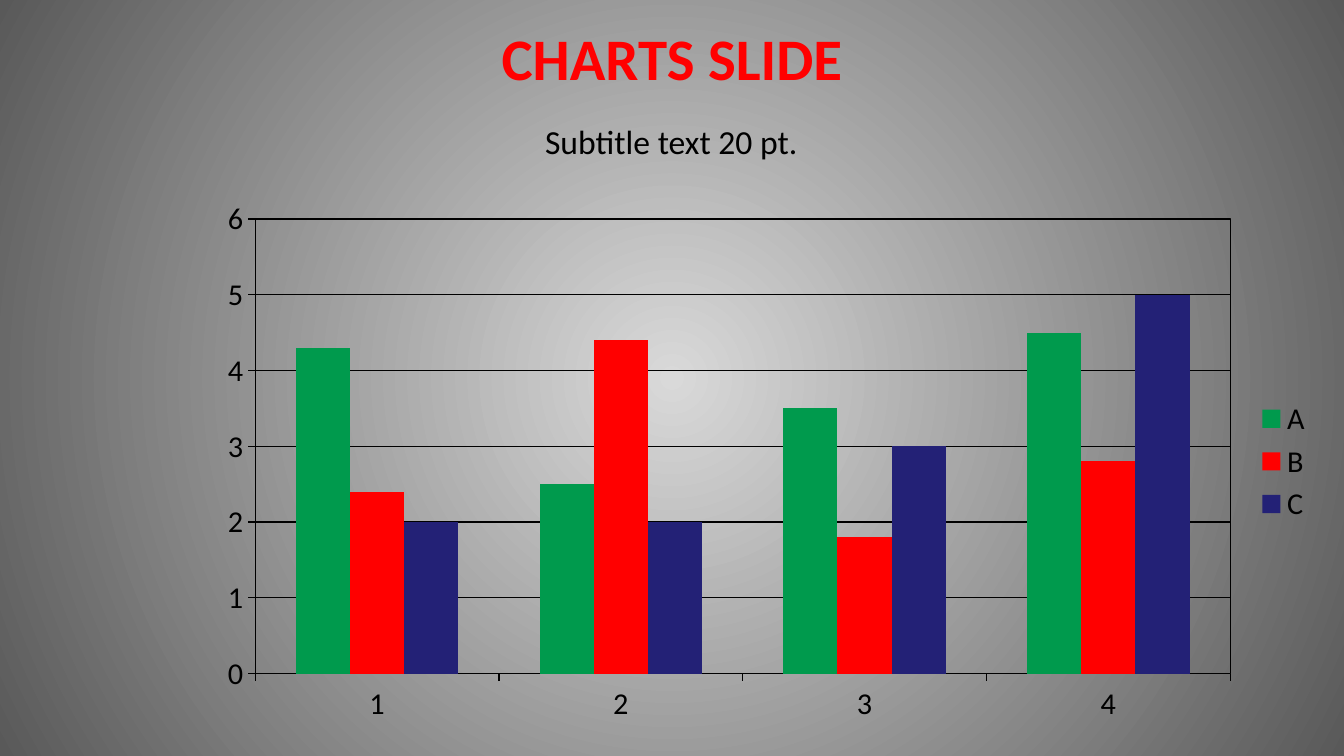
from lxml import etree
from pptx import Presentation
from pptx.chart import data
from pptx.dml.color import RGBColor
from pptx.enum import chart as kinds, text
from pptx.oxml import ns
from pptx.util import Inches, Pt

FONT = "Calibri"
BLACK = RGBColor(0x00, 0x00, 0x00)
RED = RGBColor(0xFF, 0x00, 0x00)
GREEN = RGBColor(0x00, 0x9A, 0x4D)
NAVY = RGBColor(0x23, 0x21, 0x76)
LIGHT_GRAY = RGBColor(0xD9, 0xD9, 0xD9)
DARK_GRAY = RGBColor(0x59, 0x59, 0x59)

CATEGORIES = ("1", "2", "3", "4")
SERIES = (
    ("A", (4.3, 2.5, 3.5, 4.5), GREEN),
    ("B", (2.4, 4.4, 1.8, 2.8), RED),
    ("C", (2, 2, 3, 5), NAVY),
)


def paint_background(page):
    fill = page.background.fill
    fill.gradient()
    for stop, color in zip(fill.gradient_stops, (LIGHT_GRAY, DARK_GRAY)):
        stop.color.rgb = color
    linear = next(page.element.iter(ns.qn("a:lin")))
    gradient = linear.getparent()
    gradient.remove(linear)
    circle = etree.SubElement(gradient, ns.qn("a:path"), path="circle")
    etree.SubElement(circle, ns.qn("a:fillToRect"),
                     {side: "50000" for side in "ltrb"})


def add_heading(page, bounds, words, size, color, bold, anchor):
    box = page.shapes.add_textbox(*map(Inches, bounds))
    frame = box.text_frame
    frame.word_wrap = True
    frame.vertical_anchor = anchor
    frame.margin_left = frame.margin_right = Inches(0.05)
    frame.margin_top = frame.margin_bottom = Inches(0.05)
    para = frame.paragraphs[0]
    para.text = words
    para.alignment = text.PP_ALIGN.CENTER
    para.line_spacing = 0.9
    para.font.name = FONT
    para.font.size = Pt(size)
    para.font.bold = bold
    para.font.color.rgb = color


def draw_line(line):
    line.color.rgb = BLACK
    line.width = Pt(0.75)


def place_plot(chart, bounds, margins):
    left, top, right, bottom = margins
    width, height = bounds[2:]
    area = chart._chartSpace.chart.plotArea
    for old in area.findall(ns.qn("c:layout")):
        area.remove(old)
    layout = etree.Element(ns.qn("c:layout"))
    area.insert(0, layout)
    manual = etree.SubElement(layout, ns.qn("c:manualLayout"))
    settings = {
        "layoutTarget": "inner", "xMode": "edge", "yMode": "edge",
        "x": left / width, "y": top / height,
        "w": (width - left - right) / width,
        "h": (height - top - bottom) / height,
    }
    for tag, value in settings.items():
        etree.SubElement(manual, ns.qn("c:" + tag), val=str(value))
    frame = etree.SubElement(area, ns.qn("c:spPr"))
    etree.SubElement(frame, ns.qn("a:noFill"))
    border = etree.SubElement(frame, ns.qn("a:ln"), w=str(Pt(0.75)))
    solid = etree.SubElement(border, ns.qn("a:solidFill"))
    etree.SubElement(solid, ns.qn("a:srgbClr"), val=str(BLACK))


def add_column_chart(page, bounds):
    values = data.CategoryChartData()
    values.categories = CATEGORIES
    for name, numbers, _ in SERIES:
        values.add_series(name, numbers)
    chart = page.shapes.add_chart(
        kinds.XL_CHART_TYPE.COLUMN_CLUSTERED, *map(Inches, bounds), values).chart
    chart.has_title = False
    chart.font.name = FONT
    chart.font.size = Pt(18)
    chart.font.color.rgb = BLACK

    plot = chart.plots[0]
    plot.gap_width = 150
    plot.overlap = 0
    plot.vary_by_categories = False
    for series, (_, _, color) in zip(plot.series, SERIES):
        series.format.fill.solid()
        series.format.fill.fore_color.rgb = color

    for axis in (chart.category_axis, chart.value_axis):
        axis.major_tick_mark = kinds.XL_TICK_MARK.OUTSIDE
        axis.minor_tick_mark = kinds.XL_TICK_MARK.NONE
        draw_line(axis.format.line)
    scale = chart.value_axis
    scale.minimum_scale, scale.maximum_scale, scale.major_unit = 0, 6, 1
    scale.has_major_gridlines = True
    draw_line(scale.major_gridlines.format.line)

    chart.has_legend = True
    chart.legend.position = kinds.XL_LEGEND_POSITION.RIGHT
    chart.legend.include_in_layout = False
    place_plot(chart, bounds, (0.41, 0.24, 0.78, 0.49))


def main():
    deck = Presentation()
    deck.slide_width = Inches(11.11)
    deck.slide_height = Inches(6.25)
    page = deck.slides.add_slide(deck.slide_layouts[6])
    paint_background(page)
    add_heading(page, (0, 0.21, 11.11, 0.59), "CHARTS SLIDE", 35, RED, True,
                text.MSO_ANCHOR.MIDDLE)
    add_heading(page, (0.3, 0.99, 10.5, 0.4), "Subtitle text 20 pt.", 20, BLACK,
                False, text.MSO_ANCHOR.TOP)
    add_column_chart(page, (1.7, 1.57, 9.25, 4.49))
    deck.save("out.pptx")


if __name__ == "__main__":
    main()
